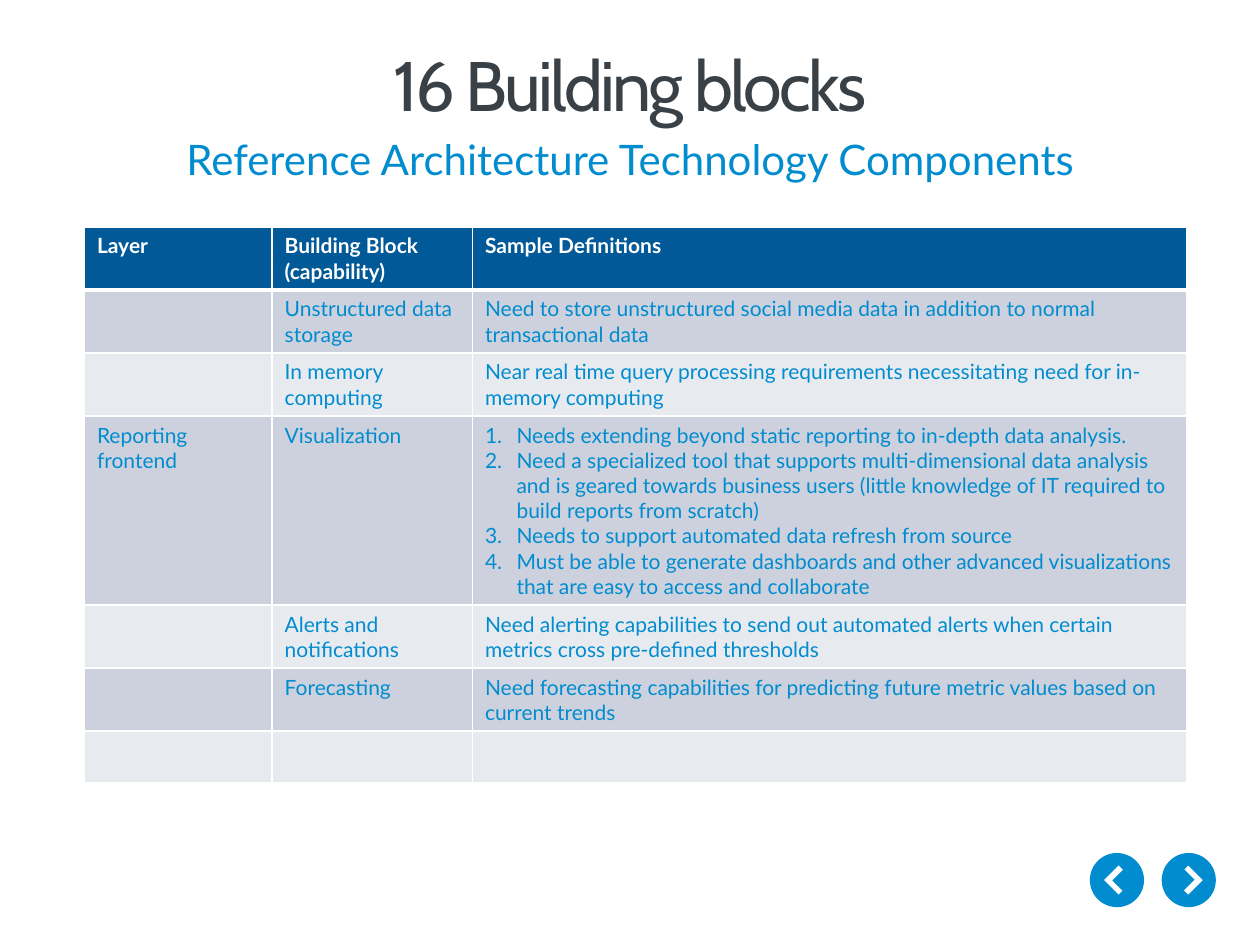
from lxml import etree
from pptx import Presentation
from pptx.dml.color import RGBColor
from pptx.enum.shapes import MSO_SHAPE
from pptx.enum.text import MSO_ANCHOR, PP_ALIGN
from pptx.oxml.ns import qn
from pptx.util import Inches, Pt

OVAL, FRAME = MSO_SHAPE.OVAL, MSO_SHAPE.HALF_FRAME
LEFT, CENTER = PP_ALIGN.LEFT, PP_ALIGN.CENTER
TOP, MIDDLE = MSO_ANCHOR.TOP, MSO_ANCHOR.MIDDLE

WIDE, HIGH = 10, 7.5
BLUE, NAVY, SLATE, WHITE = "018CCF", "015998", "394147", "FFFFFF"
BANDS = ["CCD1DD", "E7EAEF"]
COLS = [1.49, 1.59, 5.67]
LINE = 0.5  # height of a two-line row
ROWS = [LINE, LINE, LINE, 3 * LINE, LINE, LINE, 0.41]

CELLS = [
    ["Layer", "Building Block (capability)", "Sample Definitions"],
    ["", "Unstructured data storage",
     "Need to store unstructured social media data in addition to normal "
     "transactional data"],
    ["", "In memory computing",
     "Near real time query processing requirements necessitating need for "
     "in-memory computing"],
    ["Reporting frontend", "Visualization", [
        "Needs extending beyond static reporting to in-depth data analysis.",
        "Need a specialized tool that supports multi-dimensional data "
        "analysis and is geared towards business users (little knowledge of "
        "IT required to build reports from scratch)",
        "Needs to support automated data refresh from source",
        "Must be able to generate dashboards and other advanced "
        "visualizations that are easy to access and collaborate"]],
    ["", "Alerts and notifications",
     "Need alerting capabilities to send out automated alerts when certain "
     "metrics cross pre-defined thresholds"],
    ["", "Forecasting",
     "Need forecasting capabilities for predicting future metric values "
     "based on current trends"],
    ["", "", ""],
]


def color(code):
    return RGBColor.from_string(code)


def place(shape, box):
    shape.left, shape.top, shape.width, shape.height = map(Inches, box)


def number(para):
    """Turn a paragraph into an item of a numbered list."""
    props = para._p.get_or_add_pPr()
    props.set("marL", str(Inches(0.25)))
    props.set("indent", str(-Inches(0.25)))
    etree.SubElement(props, qn("a:buFont"), typeface="+mj-lt")
    etree.SubElement(props, qn("a:buAutoNum"), type="arabicPeriod")


def write(frame, text, size=12, font="Lato", ink=BLUE, bold=False,
          align=LEFT, space=0):
    """Fill a frame with one paragraph, or a numbered list."""
    items = text if isinstance(text, list) else [text]
    frame.word_wrap = True
    for i, item in enumerate(items):
        para = frame.add_paragraph() if i else frame.paragraphs[0]
        para.alignment = align
        if len(items) > 1:
            number(para)
        run = para.add_run()
        run.text = item
        run.font.size, run.font.name = Pt(size), font
        run.font.bold, run.font.color.rgb = bold, color(ink)
        if space:
            run._r.get_or_add_rPr().set("spc", str(int(space * 100)))


def head(slide, box):
    """Title in the upper part of the box, subtitle in the lower."""
    x, y, w, h = box
    title = slide.shapes.title
    place(title, (x, y, w, 0.56 * h))
    title.text_frame.vertical_anchor = MIDDLE
    write(title.text_frame, "16 Building blocks", size=40, font="Cabin",
          ink=SLATE, align=CENTER, space=-1.5)
    sub = slide.shapes.add_textbox(0, 0, 0, 0)
    place(sub, (x, y + 0.57 * h, w, 0.43 * h))
    sub.text_frame.vertical_anchor = TOP
    write(sub.text_frame, "Reference Architecture Technology Components",
          size=24, align=CENTER)


def edge(cell, base):
    """Draw white borders, with the bottom one base points wide."""
    props = cell._tc.get_or_add_tcPr()
    for side, width in zip("LRTB", (1, 1, 1, base)):
        line = etree.SubElement(props, qn("a:ln" + side), w=str(Pt(width)))
        fill = etree.SubElement(line, qn("a:solidFill"))
        etree.SubElement(fill, qn("a:srgbClr"), val=WHITE)


def grid(slide, x, y):
    frame = slide.shapes.add_table(
        len(ROWS), len(COLS), Inches(x), Inches(y),
        Inches(sum(COLS)), Inches(sum(ROWS)))
    table = frame.table
    for col, width in zip(table.columns, COLS):
        col.width = Inches(width)
    for r, (row, texts) in enumerate(zip(table.rows, CELLS)):
        row.height = Inches(ROWS[r])
        top = r == 0
        for cell, text in zip(row.cells, texts):
            edge(cell, 3 if top else 1)
            cell.fill.solid()
            cell.fill.fore_color.rgb = color(
                NAVY if top else BANDS[(r - 1) % 2])
            if text:
                write(cell.text_frame, text, bold=top,
                      ink=WHITE if top else BLUE)


def shape(slide, kind, box, fill):
    part = slide.shapes.add_shape(kind, 0, 0, 0, 0)
    place(part, box)
    part.shadow.inherit = False
    part.fill.solid()
    part.fill.fore_color.rgb = color(fill)
    part.line.fill.background()
    return part


def button(slide, box, turn, shift):
    """Round button with a chevron, shifted by a share of its width."""
    x, y, w, h = box
    shape(slide, OVAL, box, BLUE)
    mark = shape(slide, FRAME, (x + shift * w, y + 0.31 * h,
                                0.38 * w, 0.38 * h), WHITE)
    mark.adjustments[0], mark.adjustments[1] = 0.26, 0.29
    mark.rotation = turn
    # The square-ended "corner" preset has no member in MSO_SHAPE
    mark._element.spPr.find(qn("a:prstGeom")).set("prst", "corner")


def main():
    deck = Presentation()
    deck.slide_width, deck.slide_height = Inches(WIDE), Inches(HIGH)
    slide = deck.slides.add_slide(deck.slide_layouts[5])
    head(slide, (0.05 * WIDE, 0.33, 0.9 * WIDE, 1.19))
    grid(slide, 0.67, 0.24 * HIGH)
    size, gap, left = 0.43, 0.14, 8.65
    for i, (turn, shift) in enumerate([(45, 0.34), (225, 0.3)]):
        button(slide, (left + i * (size + gap), 6.77, size, size),
               turn, shift)
    deck.save("out.pptx")


if __name__ == "__main__":
    main()
